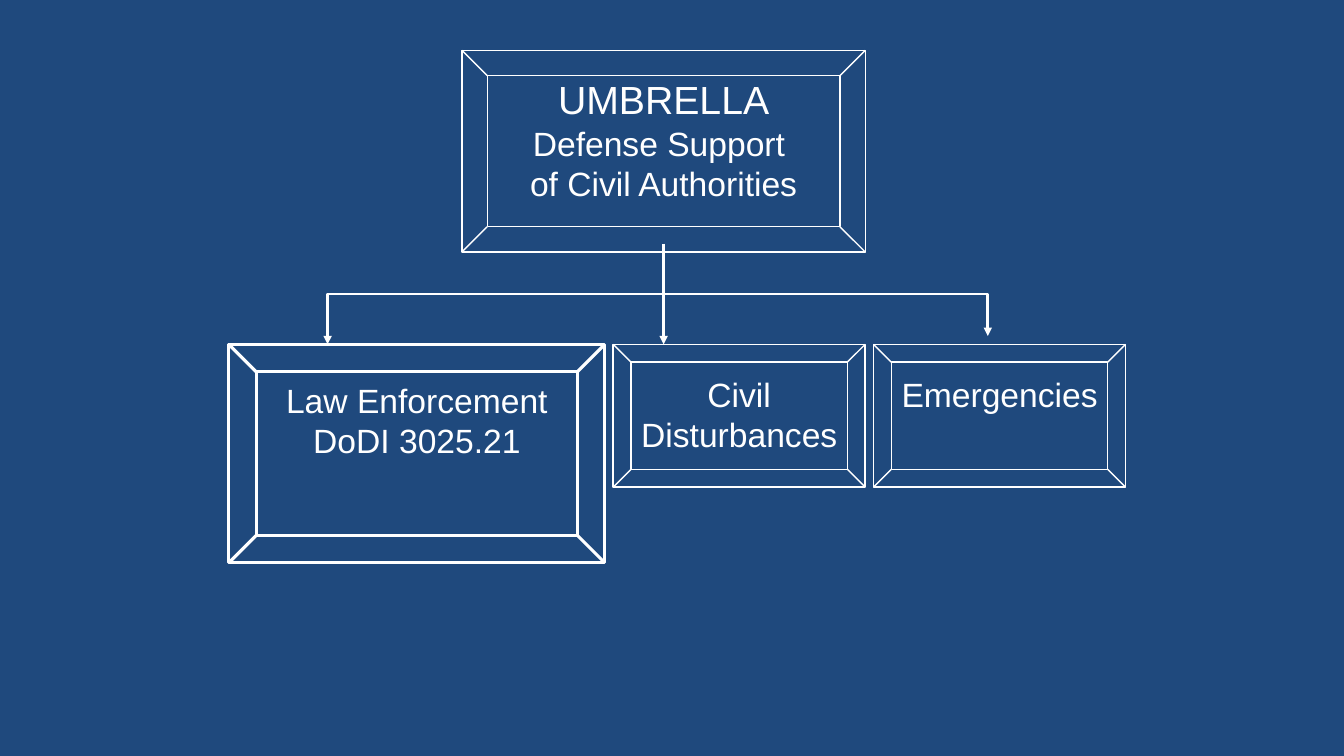
from dataclasses import dataclass

from lxml import etree
from pptx import Presentation
from pptx.dml.color import RGBColor
from pptx.enum.shapes import MSO_CONNECTOR, MSO_SHAPE
from pptx.enum.text import MSO_AUTO_SIZE, PP_ALIGN
from pptx.oxml.ns import qn
from pptx.util import Inches, Pt

BEVEL = MSO_SHAPE.BEVEL
STRAIGHT, ELBOW = MSO_CONNECTOR.STRAIGHT, MSO_CONNECTOR.ELBOW
CENTER = PP_ALIGN.CENTER
GROW = MSO_AUTO_SIZE.SHAPE_TO_FIT_TEXT

COLUMNS, ROWS = 160, 90
SLIDE_WIDTH, SLIDE_HEIGHT = Inches(13.33), Inches(7.5)


@dataclass(frozen=True)
class Theme:
    background = RGBColor(0x1F, 0x49, 0x7D)
    ink = RGBColor(0xFF, 0xFF, 0xFF)
    font = "Arial"
    heading = Pt(28)
    body = Pt(24)
    thin = Pt(1)
    arrow = Pt(2)
    bold = Pt(2.25)


THEME = Theme()

# Boxes are left, top, width and height in grid columns and rows.
UMBRELLA = {
    "box": (55, 6, 48, 24), "text_top": 2.4, "text_size": (35.6, 16.6), "outline": THEME.thin,
    "lines": [("UMBRELLA", THEME.heading), ("Defense Support ", THEME.body),
              ("of Civil Authorities", THEME.body)],
}
LAW_ENFORCEMENT = {
    "box": (27.25, 41, 44.75, 26), "text_top": 3.6, "text_size": (33.8, 10.9),
    "outline": THEME.bold,
    "lines": [("Law Enforcement", THEME.body), ("DoDI 3025.21", THEME.body)],
}
CIVIL_DISTURBANCES = {
    "box": (73, 41, 30, 17), "text_top": 2.9, "text_size": (26, 10.9), "outline": THEME.thin,
    "lines": [("Civil", THEME.body), ("Disturbances", THEME.body)],
}
EMERGENCIES = {
    "box": (104, 41, 30, 17), "text_top": 2.9, "text_size": (26, 6.1), "outline": THEME.thin,
    "lines": [("Emergencies", THEME.body)],
}
TRUNK = 79
ELBOWS = [((TRUNK, 29), (39, 41)), ((TRUNK, 30), (117.6, 40))]
STEM = ((TRUNK, 34), (TRUNK, 41))


def on_grid(*lengths):
    """Turn alternating column and row lengths into slide lengths."""
    units = (SLIDE_WIDTH / COLUMNS, SLIDE_HEIGHT / ROWS)
    return [round(length * units[index % 2]) for index, length in enumerate(lengths)]


def apply_format(target, values):
    for name, value in values.items():
        setattr(target, name, value)


def add_label(group, box, text_top, text_size, lines):
    left, top, width, _ = box
    text_width, text_height = text_size
    label = group.shapes.add_textbox(
        *on_grid(left + (width - text_width) / 2, top + text_top, text_width, text_height))
    frame = label.text_frame
    apply_format(frame, {"word_wrap": False, "auto_size": GROW})
    for index, (text, size) in enumerate(lines):
        para = frame.paragraphs[0] if index == 0 else frame.add_paragraph()
        para.alignment = CENTER
        span = para.add_run()
        span.text = text
        apply_format(span.font, {"name": THEME.font, "size": size})
        span.font.color.rgb = THEME.ink


def add_panel(page, box, text_top, text_size, outline, lines):
    """Group a bevelled frame with the label centred across it."""
    group = page.shapes.add_group_shape()
    bevel = group.shapes.add_shape(BEVEL, *on_grid(*box))
    bevel.shadow.inherit = False
    bevel.fill.background()
    bevel.line.color.rgb = THEME.ink
    bevel.line.width = outline
    add_label(group, box, text_top, text_size, lines)


def style_arrow(connector):
    connector.line.color.rgb = THEME.ink
    connector.line.width = THEME.arrow
    properties = connector.element.spPr
    outline = properties.find(qn("a:ln"))
    etree.SubElement(outline, qn("a:tailEnd"), type="triangle")
    etree.SubElement(properties, qn("a:effectLst"))


def add_downward_elbow(page, start, end):
    """Turn an elbow a quarter so that it leaves and arrives vertically."""
    start_x, start_y, end_x, end_y = on_grid(*start, *end)
    middle_x, middle_y = (start_x + end_x) // 2, (start_y + end_y) // 2
    reach, drop = abs(end_x - start_x) // 2, (end_y - start_y) // 2
    rightward = end_x > start_x
    if rightward:
        drop = -drop
    connector = page.shapes.add_connector(
        ELBOW, middle_x - drop, middle_y - reach, middle_x + drop, middle_y + reach)
    quarter_turns = 3 if rightward else 1
    connector.element.spPr.find(qn("a:xfrm")).set("rot", str(quarter_turns * 90 * 60000))
    style_arrow(connector)


def build_chart_page(deck):
    page = deck.slides.add_slide(deck.slide_layouts[6])
    page.background.fill.solid()
    page.background.fill.fore_color.rgb = THEME.background
    for panel in (UMBRELLA, LAW_ENFORCEMENT):
        add_panel(page, **panel)
    for start, end in ELBOWS:
        add_downward_elbow(page, start, end)
    add_panel(page, **CIVIL_DISTURBANCES)
    start, end = STEM
    style_arrow(page.shapes.add_connector(STRAIGHT, *on_grid(*start, *end)))
    add_panel(page, **EMERGENCIES)


def main():
    deck = Presentation()
    apply_format(deck, {"slide_width": SLIDE_WIDTH, "slide_height": SLIDE_HEIGHT})
    build_chart_page(deck)
    deck.save("out.pptx")


if __name__ == "__main__":
    main()
